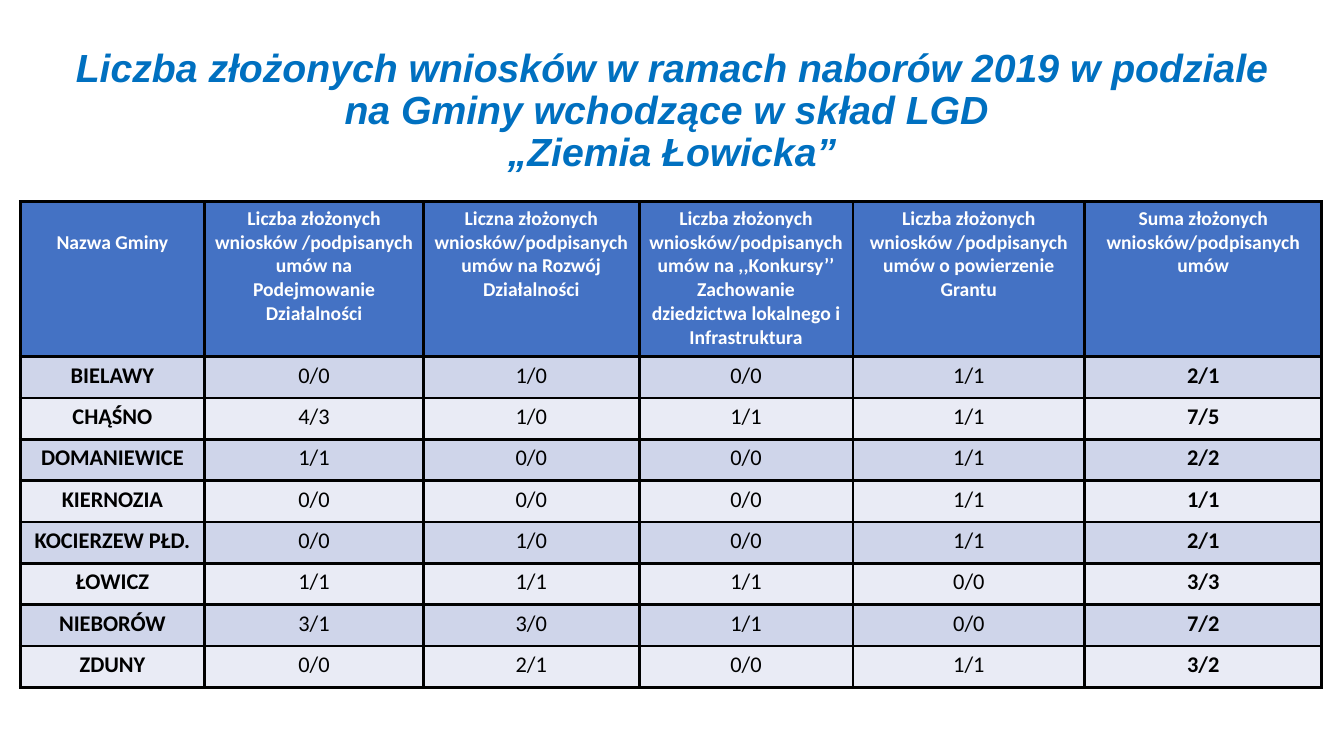
import dataclasses

import lxml.etree
import pptx
import pptx.dml.color
import pptx.enum.text
import pptx.oxml.ns
import pptx.util

Inches = pptx.util.Inches
CENTER = pptx.enum.text.PP_ALIGN.CENTER


@dataclasses.dataclass(frozen=True)
class Theme:
    title_font: str = "Arial"
    table_font: str = "Calibri"
    title_size: int = 28
    header_size: int = 14
    body_size: int = 16
    title_color: str = "0070C0"
    header_text: str = "FFFFFF"
    body_text: str = "000000"
    header_fill: str = "4472C4"
    bands: tuple = ("CFD5EA", "E9EBF5")
    border: str = "000000"
    border_width: float = 2.25


class PageBuilder:
    def __init__(self, page, theme):
        self.page = page
        self.theme = theme

    def add_span(self, para, text, font, size, color, bold=False, italic=False):
        span = para.add_run()
        span.text = text
        span.font.name = font
        span.font.size = pptx.util.Pt(size)
        span.font.bold = bold
        span.font.italic = italic
        span.font.color.rgb = pptx.dml.color.RGBColor.from_string(color)

    def title(self, lines, left, top, width, height):
        box = self.page.shapes.title
        box.left, box.top = Inches(left), Inches(top)
        box.width, box.height = Inches(width), Inches(height)
        frame = box.text_frame
        frame.word_wrap = True
        frame.auto_size = pptx.enum.text.MSO_AUTO_SIZE.NONE
        frame.vertical_anchor = pptx.enum.text.MSO_ANCHOR.BOTTOM
        para = frame.paragraphs[0]
        para.alignment = CENTER
        para.line_spacing = 0.9
        for index, line in enumerate(lines):
            if index:
                para.add_line_break()
            self.add_span(para, line, self.theme.title_font, self.theme.title_size,
                          self.theme.title_color, bold=True, italic=True)

    def outline(self, cell):
        properties = cell._tc.get_or_add_tcPr()
        for index, side in enumerate(("lnL", "lnR", "lnT", "lnB")):
            line = lxml.etree.Element(pptx.oxml.ns.qn(f"a:{side}"))
            line.set("w", str(pptx.util.Pt(self.theme.border_width)))
            fill = lxml.etree.SubElement(line, pptx.oxml.ns.qn("a:solidFill"))
            color = lxml.etree.SubElement(fill, pptx.oxml.ns.qn("a:srgbClr"))
            color.set("val", self.theme.border)
            properties.insert(index, line)

    def fill_cell(self, cell, text, size, color, fill, bold):
        cell.fill.solid()
        cell.fill.fore_color.rgb = pptx.dml.color.RGBColor.from_string(fill)
        self.outline(cell)
        frame = cell.text_frame
        for index, line in enumerate(text.split("\n")):
            para = frame.add_paragraph() if index else frame.paragraphs[0]
            para.alignment = CENTER
            self.add_span(para, line, self.theme.table_font, size, color, bold)

    def table(self, header, rows, left, top, widths, header_height, row_height):
        theme = self.theme
        height = header_height + row_height * len(rows)
        table = self.page.shapes.add_table(
            len(rows) + 1, len(header), Inches(left), Inches(top),
            Inches(sum(widths)), Inches(height)).table
        for column, width in zip(table.columns, widths):
            column.width = Inches(width)
        for row in table.rows:
            row.height = Inches(row_height)
        table.rows[0].height = Inches(header_height)

        for column, text in enumerate(header):
            self.fill_cell(table.cell(0, column), text, theme.header_size,
                           theme.header_text, theme.header_fill, True)
        # The first heading sits one line lower than the others
        table.cell(0, 0).margin_top = Inches(0.29)

        for index, values in enumerate(rows):
            band = theme.bands[index % len(theme.bands)]
            for column, text in enumerate(values):
                edge = column in (0, len(header) - 1)
                self.fill_cell(table.cell(index + 1, column), text,
                               theme.body_size, theme.body_text, band, edge)


TITLE = (
    "Liczba złożonych wniosków w ramach naborów 2019 w podziale na Gminy wchodzące w skład LGD ",
    "„Ziemia Łowicka”",
)
HEADER = (
    "Nazwa Gminy",
    "Liczba złożonych wniosków /podpisanych umów na Podejmowanie Działalności",
    "Liczna złożonych wniosków/podpisanych umów na Rozwój Działalności",
    "Liczba złożonych wniosków/podpisanych umów na ,,Konkursy’’\n"
    "Zachowanie dziedzictwa lokalnego i Infrastruktura",
    "Liczba złożonych wniosków /podpisanych umów o powierzenie Grantu",
    "Suma złożonych wniosków/podpisanych umów",
)
COMMUNES = (
    ("BIELAWY", "0/0", "1/0", "0/0", "1/1", "2/1"),
    ("CHĄŚNO", "4/3", "1/0", "1/1", "1/1", "7/5"),
    ("DOMANIEWICE", "1/1", "0/0", "0/0", "1/1", "2/2"),
    ("KIERNOZIA", "0/0", "0/0", "0/0", "1/1", "1/1"),
    ("KOCIERZEW PŁD.", "0/0", "1/0", "0/0", "1/1", "2/1"),
    ("ŁOWICZ", "1/1", "1/1", "1/1", "0/0", "3/3"),
    ("NIEBORÓW", "3/1", "3/0", "1/1", "0/0", "7/2"),
    ("ZDUNY", "0/0", "2/1", "0/0", "1/1", "3/2"),
)


def main():
    deck = pptx.Presentation()
    deck.slide_width, deck.slide_height = Inches(13.33), Inches(7.5)
    title_only = deck.slide_layouts[5]
    builder = PageBuilder(deck.slides.add_slide(title_only), Theme())

    # Heading
    builder.title(TITLE, 0.4, 1.03, 12.53, 0.76)

    # Applications and signed contracts per commune
    builder.table(HEADER, COMMUNES, 0.2, 2, (1.83, 2.17, 2.14, 2.12, 2.3, 2.35),
                  header_height=1.54, row_height=0.41)

    deck.save("out.pptx")


if __name__ == "__main__":
    main()
